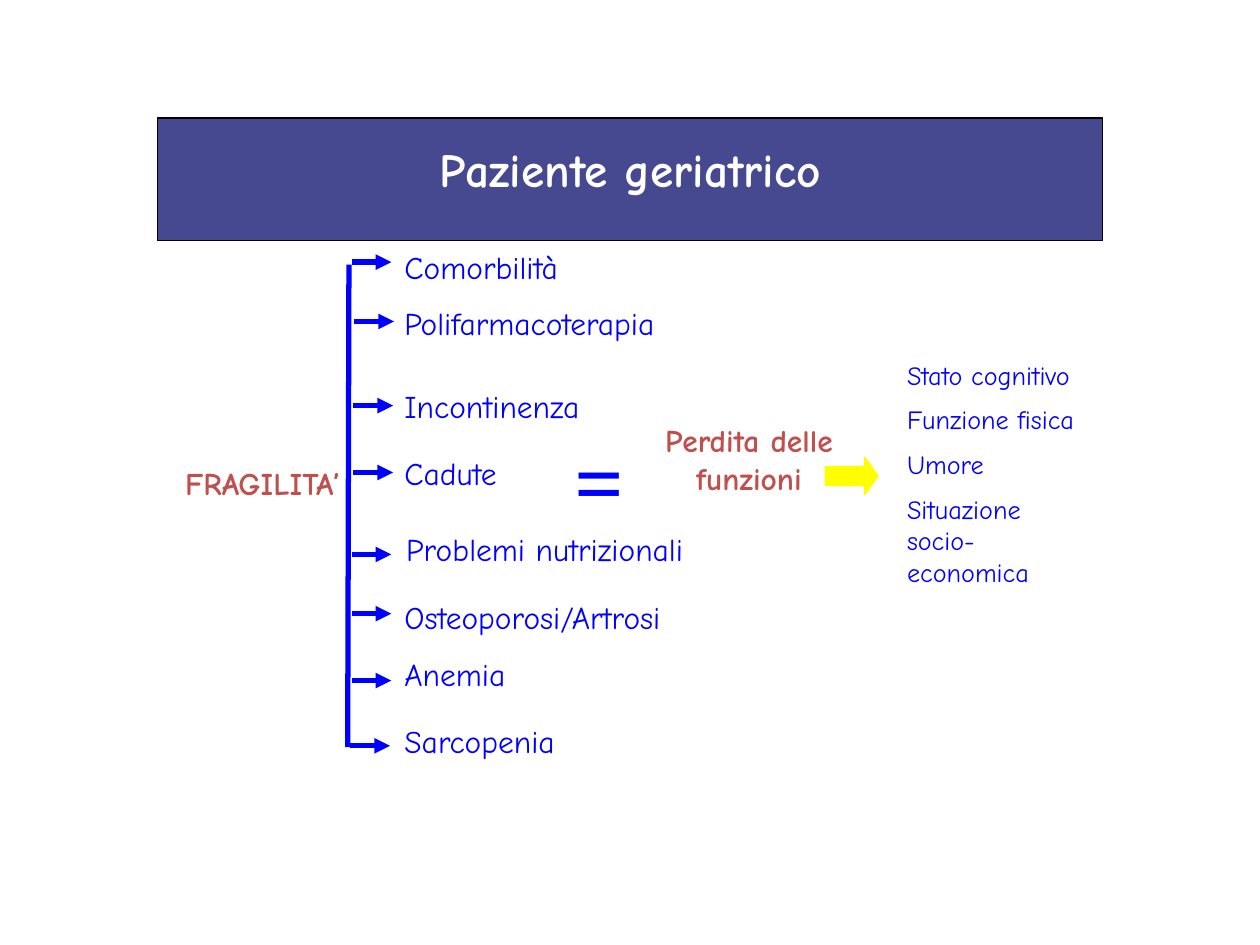
from lxml import etree
from pptx import Presentation
from pptx.dml.color import RGBColor
from pptx.enum.shapes import MSO_CONNECTOR, MSO_SHAPE
from pptx.enum.text import MSO_AUTO_SIZE, PP_ALIGN
from pptx.oxml.ns import qn
from pptx.util import Pt

LEFT, CENTER = PP_ALIGN.LEFT, PP_ALIGN.CENTER
GROW = MSO_AUTO_SIZE.SHAPE_TO_FIT_TEXT
STRAIGHT = MSO_CONNECTOR.STRAIGHT
RECTANGLE, RIGHT_ARROW = MSO_SHAPE.RECTANGLE, MSO_SHAPE.RIGHT_ARROW

COLORS = {
    "banner": "464990",
    "outline": "000000",
    "title": "FFFFFF",
    "accent": "C0504D",
    "blue": "0000FF",
    "yellow": "FFFF00",
}
FONT = "Comic Neue"


def add_text(page, frame, lines, size, color, align=LEFT, bold=False, font=FONT):
    box = page.shapes.add_textbox(*map(Pt, frame))
    box.text_frame.word_wrap = True
    box.text_frame.auto_size = GROW
    box.text_frame.text = "\n".join(lines)
    formats = {"name": font, "size": Pt(size), "bold": bold}
    for index, para in enumerate(box.text_frame.paragraphs):
        para.alignment = align
        para.space_before = Pt(size / 2 if index else 0)
        span = para.runs[0]
        for name, value in formats.items():
            setattr(span.font, name, value)
        span.font.color.rgb = RGBColor.from_string(COLORS[color])


def add_line(page, ends, arrow=False):
    line = page.shapes.add_connector(STRAIGHT, *map(Pt, ends))
    line.line.color.rgb = RGBColor.from_string(COLORS["blue"])
    line.line.width = Pt(3)
    if arrow:
        etree.SubElement(line.line._get_or_add_ln(), qn("a:tailEnd"), type="triangle")
    etree.SubElement(line._element.spPr, qn("a:effectLst"))


deck = Presentation()
deck.slide_width, deck.slide_height = Pt(720), Pt(540)
page = deck.slides.add_slide(deck.slide_layouts[6])

blocks = [
    (RECTANGLE, (90, 67.5, 540, 70), "banner", "outline"),
    (RIGHT_ARROW, (471.6, 261.2, 30.2, 21.6), "yellow", "yellow"),
]
for kind, frame, fill, outline in blocks:
    block = page.shapes.add_shape(kind, *map(Pt, frame))
    block.shadow.inherit = False
    block.fill.solid()
    block.fill.fore_color.rgb = RGBColor.from_string(COLORS[fill])
    block.line.color.rgb = RGBColor.from_string(COLORS[outline])
    block.line.width = Pt(0.75)
    if kind == RIGHT_ARROW:
        block.adjustments[1] = 0.355

add_text(page, (162, 76.5, 396, 40.5), ["Paziente geriatrico"], 27, "title", CENTER, True)
add_text(page, (87.8, 261.4, 124.6, 29), ["FRAGILITA’"], 18, "accent", CENTER, True)

add_line(page, (199.4, 151.2, 198.7, 427))
conditions = [
    ("Comorbilità", 224, 138.2, 135, 200.9, 149.8),
    ("Polifarmacoterapia", 224, 169.9, 176, 202.5, 183.7),
    ("Incontinenza", 224, 217.4, 135, 202, 231.8),
    ("Cadute", 224, 255.6, 81, 202, 270),
    ("Problemi nutrizionali", 225, 299.5, 225, 200.9, 316.8),
    ("Osteoporosi/Artrosi", 224, 338.4, 189, 200.9, 350.7),
    ("Anemia", 224, 370.8, 98, 200.9, 388.9),
    ("Sarcopenia", 224, 409, 114.5, 200.2, 426.2),
]
for label, left, top, width, start, level in conditions:
    add_text(page, (left, top, width, 29), [label], 18, "blue")
    add_line(page, (start, level, start + 22.7, level), arrow=True)

add_text(page, (298.8, 240.5, 87, 67), ["="], 49.5, "blue", CENTER, True, "Times New Roman")
add_text(page, (371.5, 236.9, 113, 72.7), ["Perdita delle funzioni"], 18, "accent", CENTER, True)
functions = ["Stato cognitivo", "Funzione fisica", "Umore", "Situazione socio-economica"]
add_text(page, (511.2, 201.6, 118.8, 162), functions, 15, "blue")

deck.save("out.pptx")
